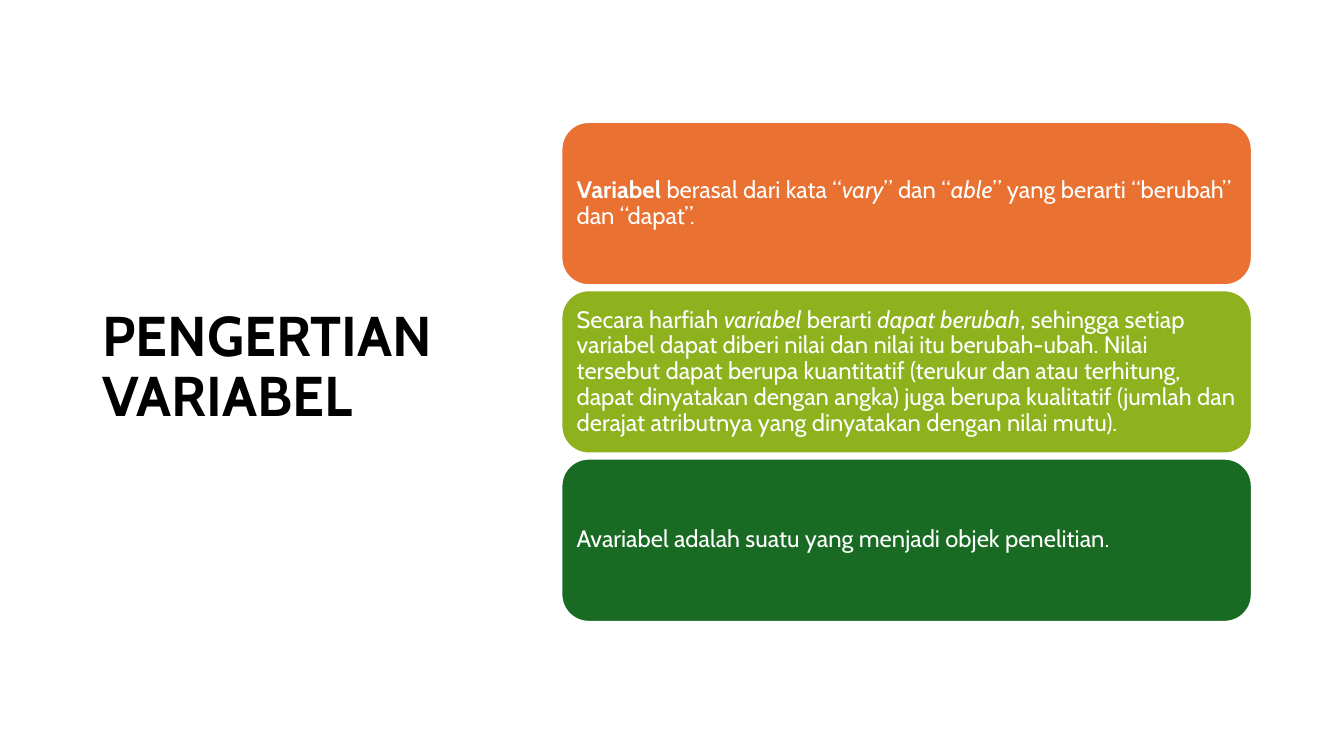
import pptx
import pptx.dml.color
import pptx.enum.shapes
import pptx.enum.text
import pptx.util

Pt = pptx.util.Pt
RGBColor = pptx.dml.color.RGBColor
ANCHOR = pptx.enum.text.MSO_ANCHOR
LEFT = pptx.enum.text.PP_ALIGN.LEFT

BLACK = RGBColor(0x00, 0x00, 0x00)
WHITE = RGBColor(0xFF, 0xFF, 0xFF)
ORANGE = RGBColor(0xE9, 0x71, 0x32)
LIME = RGBColor(0x8E, 0xB2, 0x1E)
GREEN = RGBColor(0x19, 0x6B, 0x24)

FONT = "Cabin"
TITLE_ONLY = 5

# Stack of cards, in points
CARD_LEFT, CARD_TOP = 401, 87.1
CARD_WIDTH, CARD_HEIGHT = 493.2, 116.6
CARD_PITCH = 120.25
CARD_INSET = 5.2

# Each card: fill and spans of text with their format
BOLD = {"bold": True}
ITALIC = {"italic": True}
PLAIN = {}
CARDS = [
    (ORANGE, [
        ("Variabel ", BOLD),
        ("berasal dari kata “", PLAIN),
        ("vary", ITALIC),
        ("” dan “", PLAIN),
        ("able", ITALIC),
        ("” yang berarti “berubah” dan “dapat”.", PLAIN),
    ]),
    (LIME, [
        ("Secara harfiah ", PLAIN),
        ("variabel", ITALIC),
        (" berarti ", PLAIN),
        ("dapat berubah", ITALIC),
        (", sehingga setiap variabel dapat diberi nilai dan nilai itu "
         "berubah-ubah. Nilai tersebut dapat berupa kuantitatif (terukur dan "
         "atau terhitung, dapat dinyatakan dengan angka) juga berupa "
         "kualitatif (jumlah dan derajat atributnya yang dinyatakan dengan "
         "nilai mutu).", PLAIN),
    ]),
    (GREEN, [("Avariabel adalah suatu yang menjadi objek penelitian.", PLAIN)]),
]


def set_values(target, values):
    for name, value in values.items():
        setattr(target, name, value)


def write_spans(box, spans, size, color):
    """Fill the box with one left-aligned paragraph of formatted spans."""
    set_values(box.text_frame, {
        "word_wrap": True,
        "auto_size": pptx.enum.text.MSO_AUTO_SIZE.NONE,
        "vertical_anchor": ANCHOR.MIDDLE,
    })
    para = box.text_frame.paragraphs[0]
    set_values(para, {"alignment": LEFT, "line_spacing": 0.9})
    for text, style in spans:
        span = para.add_run()
        span.text = text
        set_values(span.font, {"name": FONT, "size": Pt(size), **style})
        span.font.color.rgb = color


def add_title(page, text):
    title = page.shapes.title
    set_values(title, {"left": Pt(66), "top": Pt(44),
                       "width": Pt(266), "height": Pt(438.5)})
    write_spans(title, [(text, BOLD)], 40, BLACK)


def add_card(page, top, fill, spans):
    card = page.shapes.add_shape(
        pptx.enum.shapes.MSO_SHAPE.ROUNDED_RECTANGLE,
        Pt(CARD_LEFT), Pt(top), Pt(CARD_WIDTH), Pt(CARD_HEIGHT))
    card.shadow.inherit = False
    card.fill.solid()
    card.fill.fore_color.rgb = fill
    card.line.color.rgb = WHITE
    card.line.width = Pt(1.5)
    sides = ("left", "top", "right", "bottom")
    set_values(card.text_frame,
               {f"margin_{side}": Pt(CARD_INSET) for side in sides})
    write_spans(card, spans, 17, WHITE)


def main():
    deck = pptx.Presentation()
    set_values(deck, {"slide_width": Pt(960), "slide_height": Pt(540)})
    page = deck.slides.add_slide(deck.slide_layouts[TITLE_ONLY])

    # Title on the left
    add_title(page, "PENGERTIAN VARIABEL")

    # Cards stacked on the right
    for row, (fill, spans) in enumerate(CARDS):
        add_card(page, CARD_TOP + row * CARD_PITCH, fill, spans)

    deck.save("out.pptx")


if __name__ == "__main__":
    main()
